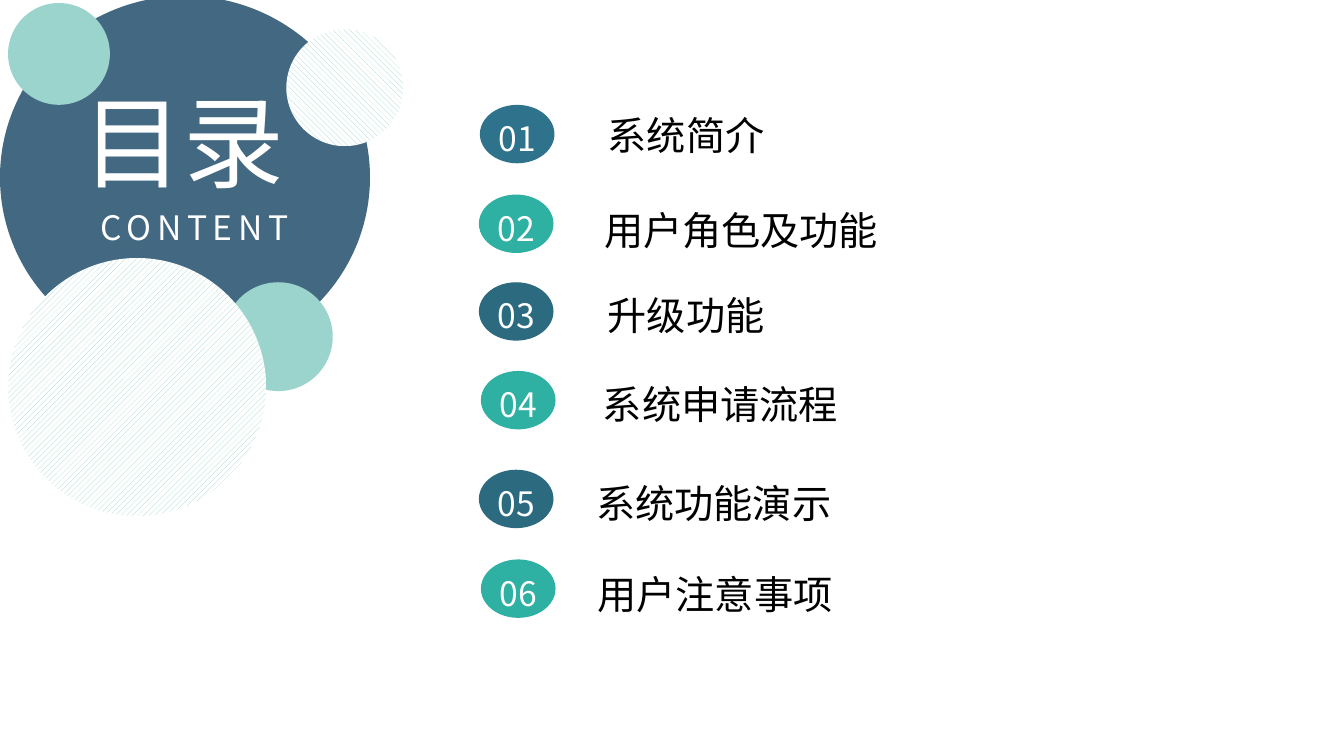
"""Build the contents slide: a circle cluster with the title and six numbered topics."""
from lxml import etree
from pptx import Presentation
from pptx.dml.color import RGBColor
from pptx.enum.dml import MSO_PATTERN
from pptx.enum.shapes import MSO_SHAPE
from pptx.enum.text import MSO_ANCHOR, MSO_AUTO_SIZE, PP_ALIGN
from pptx.oxml.ns import qn
from pptx.util import Inches, Pt

OVAL = MSO_SHAPE.OVAL
UPWARD = MSO_PATTERN.WIDE_UPWARD_DIAGONAL
DOWNWARD = MSO_PATTERN.WIDE_DOWNWARD_DIAGONAL
MIDDLE, TOP = MSO_ANCHOR.MIDDLE, MSO_ANCHOR.TOP
CENTER, LEFT = PP_ALIGN.CENTER, PP_ALIGN.LEFT
NO_AUTOFIT = MSO_AUTO_SIZE.NONE

FONT = "Noto Sans CJK SC"
COLORS = {
    "navy": "436982", "mint": "9BD4CC", "white": "FFFFFF", "black": "000000",
    "blue": "2F728B", "teal": "2EB0A2", "petrol": "2C6A80",
}
TITLE, SUBTITLE = "目录", "CONTENT"
MAIN_CIRCLE = (0, -0.04, 3.67, 3.6)
SMALL_CIRCLES = [
    (2.22, 2.8, 1.08, None),
    (0.08, 0.03, 1.01, None),
    (0.08, 2.56, 2.56, UPWARD),
    (2.84, 0.29, 1.16, DOWNWARD),
]
BADGE_SIZE = (0.74, 0.58)
LABEL_HEIGHT = 0.56
TOPICS = [
    ("系统简介", "blue", (4.76, 1.04), (5.49, 1.01, 2.63)),
    ("用户角色及功能", "teal", (4.75, 1.93), (5.2, 1.95, 4.3)),
    ("升级功能", "petrol", (4.75, 2.8), (5.55, 2.8, 2.51)),
    ("系统申请流程", "teal", (4.77, 3.68), (5.43, 3.68, 3.43)),
    ("系统功能演示", "petrol", (4.75, 4.66), (5.3, 4.66, 3.56)),
    ("用户注意事项", "teal", (4.77, 5.55), (5.3, 5.56, 3.58)),
]


def rgb(name):
    return RGBColor.from_string(COLORS[name])


def write(holder, text, size, color, align=CENTER, anchor=MIDDLE,
          insets=(0, 0), spacing=1.2, tracking=0):
    frame = holder.text_frame
    frame.auto_size = NO_AUTOFIT
    frame.word_wrap = False
    frame.vertical_anchor = anchor
    frame.margin_left = frame.margin_right = Inches(insets[0])
    frame.margin_top = frame.margin_bottom = Inches(insets[1])
    frame.text = text
    paragraph = frame.paragraphs[0]
    paragraph.alignment = align
    paragraph.line_spacing = spacing
    paragraph.font.size = Pt(size)
    paragraph.font.color.rgb = rgb(color)
    paragraph.font.name = FONT
    properties = paragraph._p.pPr.find(qn("a:defRPr"))
    etree.SubElement(properties, qn("a:ea")).set("typeface", FONT)
    if tracking:
        properties.set("spc", str(tracking * 100))


def add_oval(slide, box, color, pattern=None):
    oval = slide.shapes.add_shape(OVAL, *map(Inches, box))
    oval.shadow.inherit = False
    oval.line.fill.background()
    if pattern is None:
        oval.fill.solid()
    else:
        oval.fill.patterned()
        oval.fill.pattern = pattern
        oval.fill.back_color.rgb = rgb("white")
    oval.fill.fore_color.rgb = rgb(color)
    return oval


def add_text(slide, box):
    return slide.shapes.add_textbox(*map(Inches, box))


def main():
    deck = Presentation()
    deck.slide_width, deck.slide_height = Inches(13.33), Inches(7.5)
    slide = deck.slides.add_slide(deck.slide_layouts[5])

    main_circle = add_oval(slide, MAIN_CIRCLE, "navy")
    title = slide.shapes.title
    title.left, title.top = Inches(0.72), Inches(0.74)
    title.width, title.height = Inches(2.22), Inches(1.31)
    write(title, TITLE, 72, "white", LEFT, TOP, (0.1, 0.05), 1.0)
    main_circle.element.addnext(title.element)
    subtitle = add_text(slide, (0.72, 2, 2.42, 0.56))
    write(subtitle, SUBTITLE, 24, "white", CENTER, TOP, (0.1, 0.05), 1.0, tracking=4)

    for left, top, diameter, pattern in SMALL_CIRCLES:
        add_oval(slide, (left, top, diameter, diameter), "mint", pattern)

    for number, (topic, color, badge_corner, label_box) in enumerate(TOPICS, 1):
        badge = add_oval(slide, (*badge_corner, *BADGE_SIZE), color)
        write(badge, f"{number:02d}", 24, "white", insets=(0.02, 0.02))
        label = add_text(slide, (*label_box, LABEL_HEIGHT))
        write(label, topic, 28, "black")

    deck.save("out.pptx")


if __name__ == "__main__":
    main()
